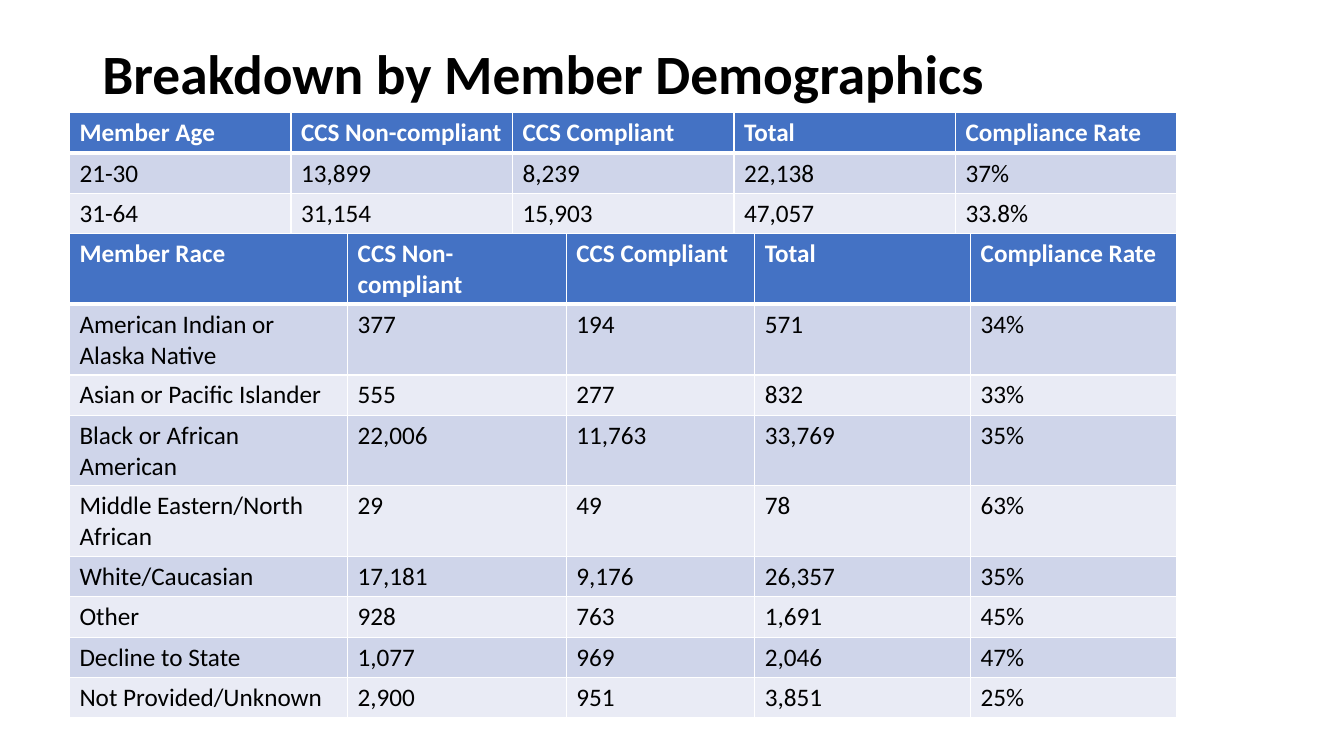
from lxml import etree
from pptx import Presentation
from pptx import util as u
from pptx.dml.color import RGBColor
from pptx.enum import text
from pptx.oxml import ns

BLUE = RGBColor(0x44, 0x72, 0xC4)
MID = RGBColor(0xCF, 0xD5, 0xEA)
PALE = RGBColor(0xE9, 0xEB, 0xF5)
WHITE = RGBColor(255, 255, 255)
BLACK = RGBColor(0, 0, 0)
FONT = "Calibri"
LEFT, WIDTH = 1.75, 27.91
LOW, HIGH = 0.93, 1.65  # heights of one-line and two-line rows
HEADS = ["CCS Non-compliant", "CCS Compliant", "Total", "Compliance Rate"]

AGES = [
    ["Member Age", *HEADS],
    ["21-30", "13,899", "8,239", "22,138", "37%"],
    ["31-64", "31,154", "15,903", "47,057", "33.8%"],
]
RACES = [
    ["Member Race", *HEADS],
    ["American Indian or Alaska Native", "377", "194", "571", "34%"],
    ["Asian or Pacific Islander", "555", "277", "832", "33%"],
    ["Black or African American", "22,006", "11,763", "33,769", "35%"],
    ["Middle Eastern/North African", "29", "49", "78", "63%"],
    ["White/Caucasian", "17,181", "9,176", "26,357", "35%"],
    ["Other", "928", "763", "1,691", "45%"],
    ["Decline to State", "1,077", "969", "2,046", "47%"],
    ["Not Provided/Unknown", "2,900", "951", "3,851", "25%"],
]
TABLES = [
    (2.84, AGES, [WIDTH / 5] * 5, [LOW] * 3),
    (5.89, RACES, [7.01, 5.51, 4.75, 5.44, 5.2],
     [HIGH, HIGH, LOW, HIGH, HIGH, LOW, LOW, LOW, LOW]),
]


def write(para, words, size, color, bold):
    run = para.add_run()
    run.text = words
    font = run.font
    font.name, font.size, font.bold = FONT, u.Pt(size), bold
    font.color.rgb = color


def edge(cell, side, width):
    """Draw a white border on one side (L, R, T or B) of a cell."""
    props = cell._tc.get_or_add_tcPr()
    line = etree.SubElement(props, ns.qn(f"a:ln{side}"), w=str(u.Pt(width)))
    fill = etree.SubElement(line, ns.qn("a:solidFill"))
    etree.SubElement(fill, ns.qn("a:srgbClr"), val=str(WHITE))


deck = Presentation()
deck.slide_width, deck.slide_height = u.Cm(33.87), u.Cm(19.05)
slide = deck.slides.add_slide(deck.slide_layouts[6])

title = slide.shapes.add_textbox(u.Cm(2.33), u.Cm(1.01), u.Cm(29.21), u.Cm(1.83))
frame = title.text_frame
frame.word_wrap = True
frame.vertical_anchor = text.MSO_ANCHOR.MIDDLE
frame.paragraphs[0].line_spacing = 0.9
write(frame.paragraphs[0], "Breakdown by Member Demographics", 39.6, BLACK, True)

for top, data, cols, rows in TABLES:
    table = slide.shapes.add_table(
        len(rows), len(cols), u.Cm(LEFT), u.Cm(top), u.Cm(WIDTH), u.Cm(sum(rows))
    ).table
    for col, width in zip(table.columns, cols):
        col.width = u.Cm(width)
    for r, (row, height) in enumerate(zip(table.rows, rows)):
        row.height = u.Cm(height)
        head = r == 0
        for cell, words in zip(row.cells, data[r]):
            edge(cell, "L", 1)
            edge(cell, "R", 1)
            edge(cell, "T", 3 if r == 1 else 1)
            edge(cell, "B", 3 if head else 1)
            cell.fill.solid()
            cell.fill.fore_color.rgb = BLUE if head else MID if r % 2 else PALE
            write(cell.text_frame.paragraphs[0], words, 18,
                  WHITE if head else BLACK, head)

deck.save("out.pptx")
